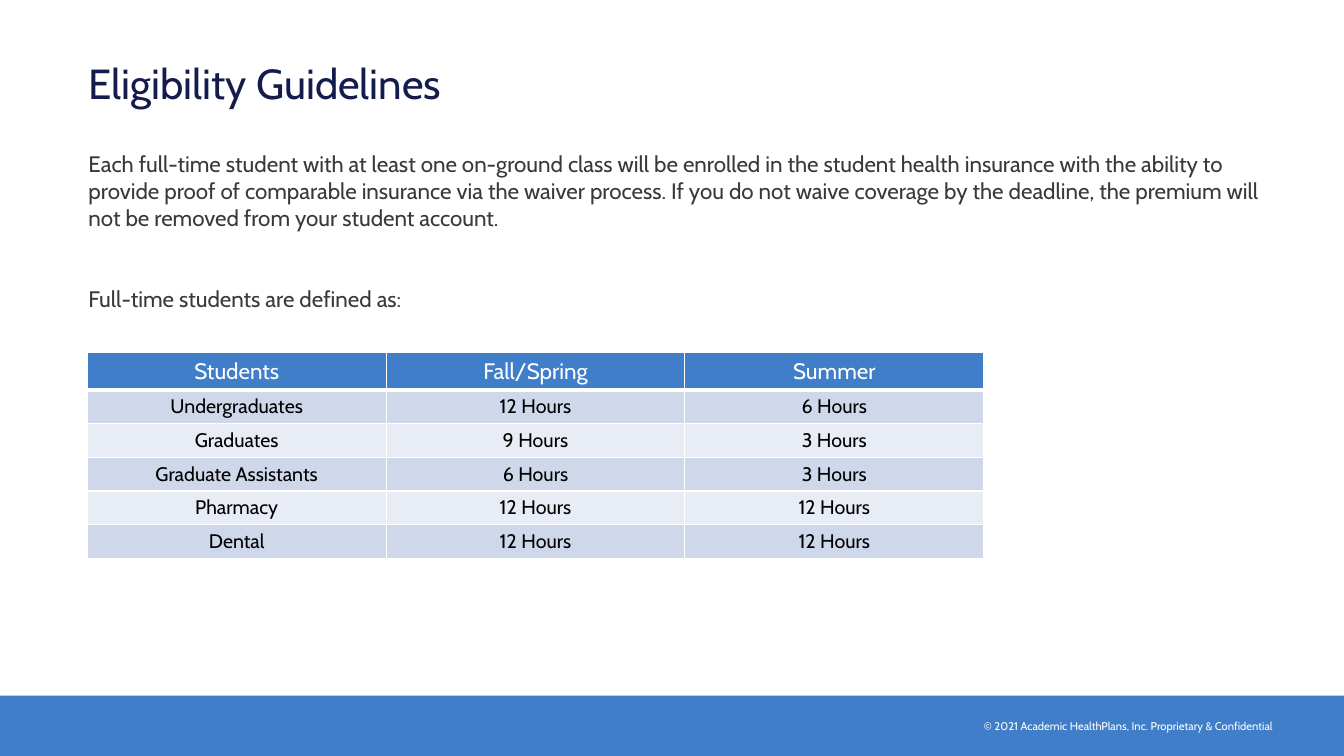
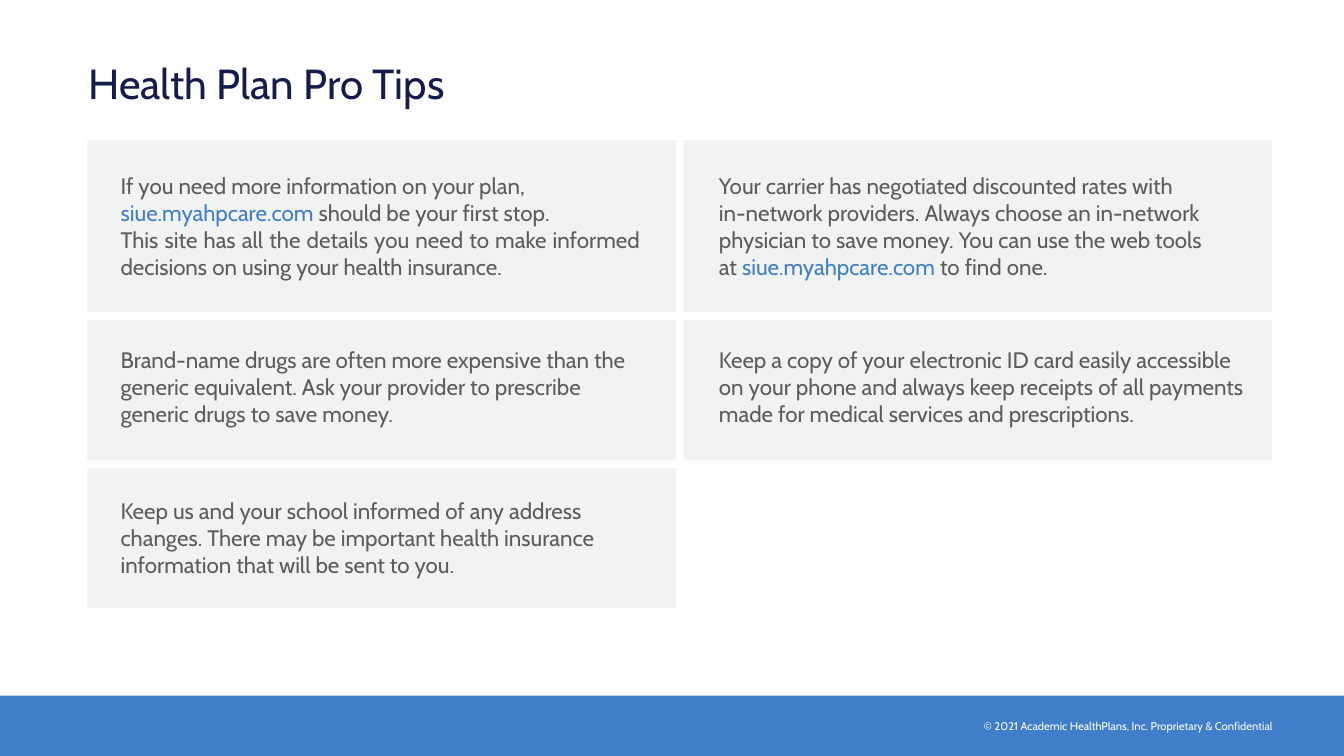
import dataclasses
import typing

import lxml.etree
import pptx
import pptx.dml.color
import pptx.enum.shapes
import pptx.enum.text
import pptx.oxml.ns
import pptx.util

Cm = pptx.util.Cm
Pt = pptx.util.Pt
qn = pptx.oxml.ns.qn
ALIGN = pptx.enum.text.PP_ALIGN
ANCHOR = pptx.enum.text.MSO_ANCHOR


@dataclasses.dataclass(frozen=True)
class Theme:
    font: str = "Cabin"
    navy: str = "141B4D"
    blue: str = "407EC9"
    white: str = "FFFFFF"
    black: str = "000000"
    body: str = "3B3838"
    gray: str = "5B5C5B"
    card: str = "F1F2F2"
    rows: tuple = ("CFD8EB", "E8ECF5")
    title: int = 30
    text: int = 16
    cell: int = 14
    small: int = 8


class Box(typing.NamedTuple):
    left: float
    top: float
    width: float
    height: float

    def cm(self):
        return [Cm(side) for side in self]


THEME = Theme()
PAGE = Box(0, 0, 33.87, 19.05)
BAND = Box(0, 17.53, 33.87, 1.52)
TITLE = Box(1.98, 0.81, 16.6, 2.54)
INTRO = Box(1.98, 3.66, 30.71, 4.37)
GRID = Box(2.2, 8.89, 22.58, 5.18)
CARDS = Box(2.2, 3.53, 29.86, 11.8)

NOTICE = "© 2021 Academic HealthPlans, Inc. Proprietary & Confidential"
LINK = "siue.myahpcare.com"

RULES = (
    "Each full-time student with at least one on-ground class will be enrolled "
    "in the student health insurance with the ability to provide proof of "
    "comparable insurance via the waiver process. If you do not waive coverage "
    "by the deadline, the premium will not be removed from your student account.\n"
    "Full-time students are defined as:"
)

HOURS = [
    ("Students", "Fall/Spring", "Summer"),
    ("Undergraduates", "12 Hours", "6 Hours"),
    ("Graduates", "9 Hours", "3 Hours"),
    ("Graduate Assistants", "6 Hours", "3 Hours"),
    ("Pharmacy", "12 Hours", "12 Hours"),
    ("Dental", "12 Hours", "12 Hours"),
]

TIPS = [
    ("If you need more information on your plan,\n"
     "siue.myahpcare.com should be your first stop.\n"
     "This site has all the details you need to make informed decisions "
     "on using your health insurance.", ALIGN.JUSTIFY),
    ("Your carrier has negotiated discounted rates with\n"
     "in-network providers. Always choose an in-network\n"
     "physician to save money. You can use the web tools\n"
     "at siue.myahpcare.com to find one.", ALIGN.LEFT),
    ("Brand-name drugs are often more expensive than the\n"
     "generic equivalent. Ask your provider to prescribe\n"
     "generic drugs to save money.", ALIGN.LEFT),
    ("Keep a copy of your electronic ID card easily accessible\n"
     "on your phone and always keep receipts of all payments "
     "made for medical services and prescriptions.", ALIGN.LEFT),
    ("Keep us and your school informed of any address changes. "
     "There may be important health insurance information that "
     "will be sent to you.", ALIGN.LEFT),
]


def rgb(code):
    return pptx.dml.color.RGBColor.from_string(code)


def style(frame, size, color, align=ALIGN.LEFT):
    for para in frame.paragraphs:
        para.alignment = align
        for run in para.runs:
            run.font.name = THEME.font
            run.font.size = Pt(size)
            run.font.bold = False
            run.font.color.rgb = rgb(color)


def panel(slide, box, color):
    kind = pptx.enum.shapes.MSO_SHAPE.RECTANGLE
    shape = slide.shapes.add_shape(kind, *box.cm())
    shape.shadow.inherit = False
    shape.fill.solid()
    shape.fill.fore_color.rgb = rgb(color)
    shape.line.fill.background()
    shape.text_frame.word_wrap = True
    return shape.text_frame


def footer(slide, box):
    frame = panel(slide, box, THEME.blue)
    frame.margin_right = Cm(1.78)
    frame.vertical_anchor = ANCHOR.MIDDLE
    frame.text = NOTICE
    style(frame, THEME.small, THEME.white, ALIGN.RIGHT)


def start(deck, name):
    slide = deck.slides.add_slide(deck.slide_layouts[5])
    footer(slide, BAND)
    title = slide.shapes.title
    title.left, title.top, title.width, title.height = TITLE.cm()
    title.text_frame.text = name
    title.text_frame.vertical_anchor = ANCHOR.MIDDLE
    style(title.text_frame, THEME.title, THEME.navy)
    return slide


def intro(slide, box):
    frame = slide.shapes.add_textbox(*box.cm()).text_frame
    frame.word_wrap = True
    frame.text = RULES
    style(frame, THEME.text, THEME.body)
    frame.paragraphs[1].space_before = Pt(38.6)


def border(cell, top, base):
    props = cell._tc.get_or_add_tcPr()
    widths = {"a:lnL": 1, "a:lnR": 1, "a:lnT": top, "a:lnB": base}
    for spot, (tag, width) in enumerate(widths.items()):
        line = lxml.etree.Element(qn(tag), w=str(Pt(width)))
        fill = lxml.etree.SubElement(line, qn("a:solidFill"))
        lxml.etree.SubElement(fill, qn("a:srgbClr"), val=THEME.white)
        props.insert(spot, line)


def hours(slide, box):
    count = len(HOURS[0])
    table = slide.shapes.add_table(len(HOURS), count, *box.cm()).table
    for col in table.columns:
        col.width = Cm(round(box.width / count, 2))
    for r, line in enumerate(HOURS):
        head = r == 0
        table.rows[r].height = Cm(0.93 if head else 0.85)
        size, ink = (THEME.text, THEME.white) if head else (THEME.cell, THEME.black)
        fill = THEME.blue if head else THEME.rows[(r - 1) % 2]
        for c, text in enumerate(line):
            cell = table.cell(r, c)
            cell.text_frame.text = text
            style(cell.text_frame, size, ink, ALIGN.CENTER)
            cell.fill.solid()
            cell.fill.fore_color.rgb = rgb(fill)
            border(cell, 3 if r == 1 else 1, 3 if head else 1)


def card(slide, box, text, align, sides, top):
    frame = panel(slide, box, THEME.card)
    frame.vertical_anchor = ANCHOR.TOP
    frame.margin_left, frame.margin_right = [Cm(side) for side in sides]
    frame.margin_top = Cm(top)
    for n, line in enumerate(text.split("\n")):
        para = frame.add_paragraph() if n else frame.paragraphs[0]
        for part in filter(None, line.partition(LINK)):
            para.add_run().text = part
    style(frame, THEME.text, THEME.gray, align)
    for para in frame.paragraphs:
        for run in para.runs:
            if run.text == LINK:
                run.font.color.rgb = rgb(THEME.blue)


def cards(slide, box):
    gap = 0.2
    width = (box.width - gap) / 2
    tall = 4.34
    low = (box.height - tall - 2 * gap) / 2
    sides = [(0.84, 0.89), (0.89, 0.3)]
    tops = [0.81, 0.66, 0.74]
    for n, (text, align) in enumerate(TIPS):
        row, col = divmod(n, 2)
        top = box.top + (tall + gap + (row - 1) * (low + gap) if row else 0)
        spot = Box(box.left + col * (width + gap), top, width, low if row else tall)
        card(slide, spot, text, align, sides[col], tops[row])


def main():
    deck = pptx.Presentation()
    deck.slide_width, deck.slide_height = PAGE.cm()[2:]
    guide = start(deck, "Eligibility Guidelines")
    intro(guide, INTRO)
    hours(guide, GRID)
    cards(start(deck, "Health Plan Pro Tips"), CARDS)
    deck.save("out.pptx")


if __name__ == "__main__":
    main()
